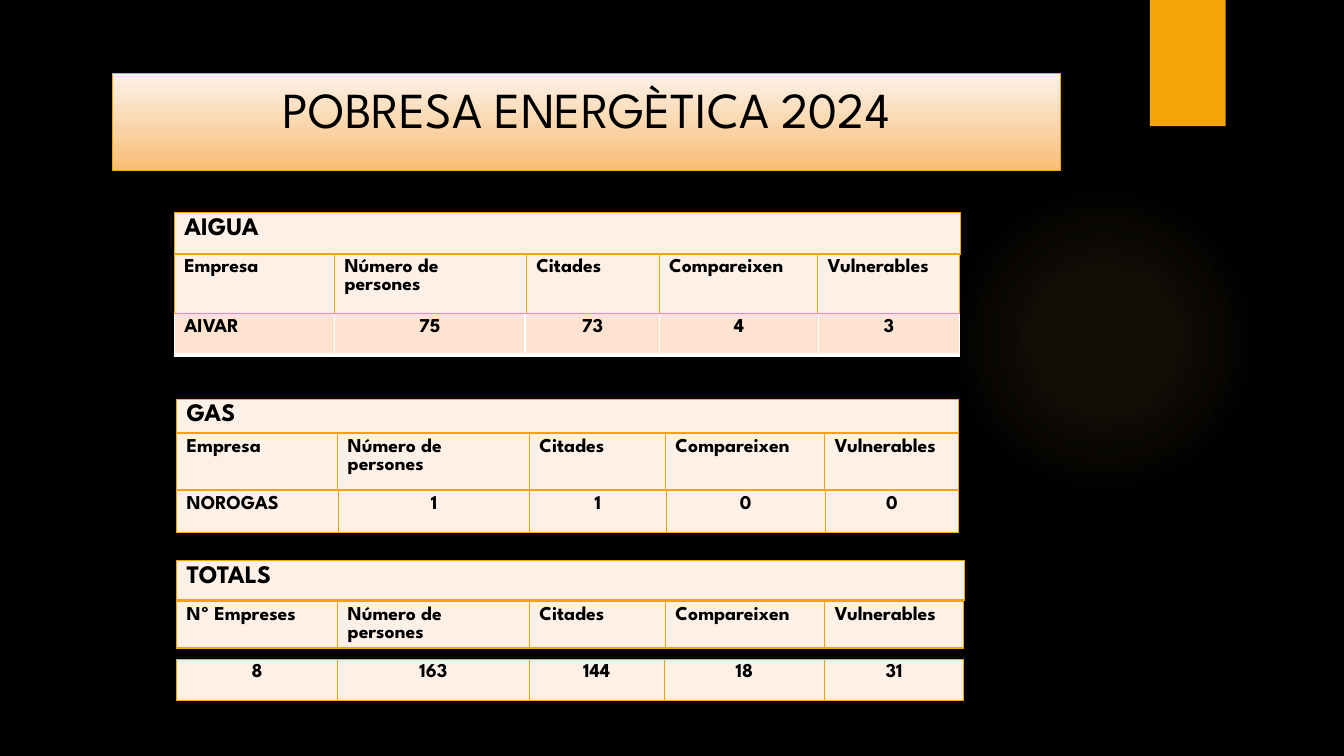
import pptx
import pptx.util
import pptx.dml.color
import pptx.enum.shapes
import pptx.enum.text
import pptx.oxml
import pptx.oxml.ns

Cm = pptx.util.Cm
Pt = pptx.util.Pt
RGBColor = pptx.dml.color.RGBColor
SHAPE = pptx.enum.shapes.MSO_SHAPE
ALIGN = pptx.enum.text.PP_ALIGN

FONT = "League Spartan"
BLACK = RGBColor(0x00, 0x00, 0x00)
WHITE = RGBColor(0xFF, 0xFF, 0xFF)
GOLD = RGBColor(0xF5, 0xA4, 0x08)
GLOW = RGBColor(0xFA, 0xC9, 0x6A)
TITLE_TOP = RGBColor(0xFD, 0xF2, 0xE9)
TITLE_BOTTOM = RGBColor(0xF8, 0xBD, 0x75)
CREAM = RGBColor(0xFD, 0xF0, 0xE7)
PEACH = RGBColor(0xFE, 0xE3, 0xD1)

COLUMNS = ["Número de persones", "Citades", "Compareixen", "Vulnerables"]


def add_run(p, text, size, bold=False):
    r = p.add_run()
    r.text = text
    r.font.name = FONT
    r.font.size = Pt(size)
    r.font.bold = bold
    r.font.color.rgb = BLACK


def add_shape(s, kind, left, top, width, height):
    sp = s.shapes.add_shape(kind, Cm(left), Cm(top), Cm(width), Cm(height))
    sp.shadow.inherit = False
    sp.line.fill.background()
    return sp


def add_glow(s, left, top, size):
    sp = add_shape(s, SHAPE.OVAL, left, top, size, size)
    sp.fill.background()
    stops = "".join(
        f'<a:gs pos="{pos * 1000}"><a:srgbClr val="{GLOW}">'
        f'<a:alpha val="{alpha * 1000}"/></a:srgbClr></a:gs>'
        for pos, alpha in [(0, 7), (36, 6), (69, 0)])
    grad = pptx.oxml.parse_xml(
        f'<a:gradFill {pptx.oxml.ns.nsdecls("a")}><a:gsLst>{stops}</a:gsLst>'
        '<a:path path="circle"><a:fillToRect l="50000" t="50000" '
        'r="50000" b="50000"/></a:path></a:gradFill>')
    props = sp.element.spPr
    props.replace(props.find(pptx.oxml.ns.qn("a:noFill")), grad)


def add_title(s, text):
    sp = add_shape(s, SHAPE.RECTANGLE, 2.84, 1.85, 23.88, 2.46)
    sp.fill.gradient()
    sp.fill.gradient_angle = 270
    for stop, color in zip(sp.fill.gradient_stops, (TITLE_TOP, TITLE_BOTTOM)):
        stop.color.rgb = color
    sp.line.color.rgb = GOLD
    sp.line.width = Pt(0.75)
    tf = sp.text_frame
    tf.word_wrap = True
    tf.vertical_anchor = pptx.enum.text.MSO_ANCHOR.TOP
    p = tf.paragraphs[0]
    p.alignment = ALIGN.CENTER
    add_run(p, text, 36)


def set_borders(cell, color, bottom):
    props = cell._tc.get_or_add_tcPr()
    for side, width in zip("LRTB", (1, 1, 1, bottom)):
        props.append(pptx.oxml.parse_xml(
            f'<a:ln{side} {pptx.oxml.ns.nsdecls("a")} w="{Pt(width)}">'
            f'<a:solidFill><a:srgbClr val="{color}"/></a:solidFill></a:ln{side}>'))


def add_row(s, left, top, height, widths, texts, size=14, fill=CREAM,
            border=GOLD, bottom=1):
    """One-row table; figures are centred and words stay left."""
    frame = s.shapes.add_table(1, len(texts), Cm(left), Cm(top),
                               Cm(sum(widths)), Cm(height))
    table = frame.table
    table.rows[0].height = Cm(height)
    for i, (width, text) in enumerate(zip(widths, texts)):
        table.columns[i].width = Cm(width)
        cell = table.cell(0, i)
        set_borders(cell, border, bottom)
        cell.fill.solid()
        cell.fill.fore_color.rgb = fill
        p = cell.text_frame.paragraphs[0]
        p.alignment = ALIGN.CENTER if text.isdigit() else ALIGN.LEFT
        add_run(p, text, size, bold=True)


def main():
    prs = pptx.Presentation()
    prs.slide_width = Cm(33.87)
    prs.slide_height = Cm(19.05)
    s = prs.slides.add_slide(prs.slide_layouts[6])
    s.background.fill.solid()
    s.background.fill.fore_color.rgb = BLACK

    # Decoration and title
    add_glow(s, 23.9, 4.65, 7.82)
    tab = add_shape(s, SHAPE.RECTANGLE, 28.98, 0, 1.91, 3.18)
    tab.fill.solid()
    tab.fill.fore_color.rgb = GOLD
    add_title(s, "POBRESA ENERGÈTICA 2024")

    # Water
    add_row(s, 4.39, 5.36, 1.04, [19.81], ["AIGUA"], size=18)
    add_row(s, 4.39, 7.9, 1.04, [4.04, 4.8, 3.4, 3.99, 3.56],
            ["AIVAR", "75", "73", "4", "3"],
            fill=PEACH, border=WHITE, bottom=3)
    add_row(s, 4.39, 6.4, 1.5, [4.04, 4.83, 3.35, 3.99, 3.58],
            ["Empresa"] + COLUMNS)

    # Gas
    add_row(s, 4.45, 10.06, 0.84, [19.71], ["GAS"], size=18)
    add_row(s, 4.45, 12.37, 1.04, [4.09, 4.8, 3.45, 4.01, 3.35],
            ["NOROGAS", "1", "1", "0", "0"])
    add_row(s, 4.45, 10.92, 1.42, [4.06, 4.83, 3.43, 4.01, 3.38],
            ["Empresa"] + COLUMNS)

    # Totals
    add_row(s, 4.45, 16.61, 1.04, [4.06, 4.83, 3.4, 4.04, 3.51],
            ["8", "163", "144", "18", "31"])
    add_row(s, 4.45, 15.16, 0.86, [4.06, 4.83, 3.43, 4.01, 3.51],
            ["Nº Empreses"] + COLUMNS)
    add_row(s, 4.45, 14.12, 1, [19.86], ["TOTALS"], size=18)

    prs.save("out.pptx")


if __name__ == "__main__":
    main()
